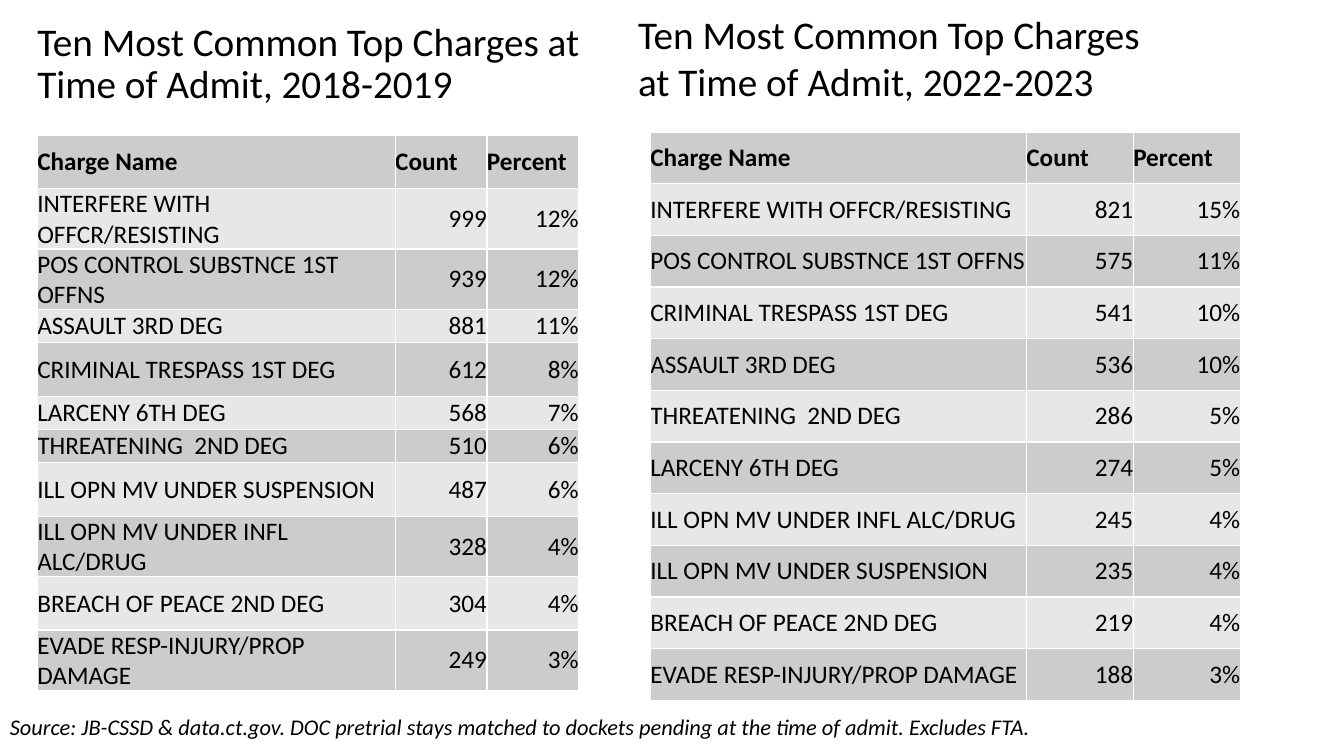
from dataclasses import dataclass

from lxml import etree
from pptx import Presentation
from pptx.dml.color import RGBColor
from pptx.enum.text import MSO_ANCHOR, MSO_AUTO_SIZE, PP_ALIGN
from pptx.oxml.ns import qn
from pptx.util import Pt

LEFT, RIGHT = PP_ALIGN.LEFT, PP_ALIGN.RIGHT
TOP, MIDDLE = MSO_ANCHOR.TOP, MSO_ANCHOR.MIDDLE
FIXED, GROW = MSO_AUTO_SIZE.NONE, MSO_AUTO_SIZE.SHAPE_TO_FIT_TEXT
TITLE_ONLY = 5
SCALE = 9144  # 100 px to the inch


def px(num):
    return num * SCALE


@dataclass(frozen=True)
class Theme:
    font: str = "Calibri"
    ink: str = "000000"
    dark: str = "CCCCCC"
    light: str = "E7E7E7"
    rule: str = "FFFFFF"
    head: int = 28
    body: int = 18
    note: int = 16


class Board:
    def __init__(self, slide, theme):
        self.slide = slide
        self.theme = theme

    def style(self, frame, size, bold=False, italic=False, align=LEFT):
        for para in frame.paragraphs:
            para.alignment = align
            for run in para.runs:
                font = run.font
                font.name = self.theme.font
                font.size = Pt(size)
                font.bold = bold
                font.italic = italic
                font.color.rgb = RGBColor.from_string(self.theme.ink)

    def title(self, text, x, y, w, h):
        shape = self.slide.shapes.title
        shape.left, shape.top, shape.width, shape.height = map(px, (x, y, w, h))
        frame = shape.text_frame
        frame.text = text
        frame.word_wrap = True
        frame.auto_size = FIXED
        frame.vertical_anchor = MIDDLE
        frame.paragraphs[0].line_spacing = 0.9
        self.style(frame, self.theme.head)

    def text(self, text, x, y, w, h, size, italic=False):
        frame = self.slide.shapes.add_textbox(*map(px, (x, y, w, h))).text_frame
        frame.text = text
        frame.word_wrap = True
        frame.auto_size = GROW
        frame.vertical_anchor = TOP
        self.style(frame, size, italic=italic)

    def edge(self, cell):
        """Draw a thin rule on all four sides of a cell."""
        props = cell._tc.get_or_add_tcPr()
        for side in ("a:lnL", "a:lnR", "a:lnT", "a:lnB"):
            line = etree.SubElement(props, qn(side), w=str(Pt(1)))
            fill = etree.SubElement(line, qn("a:solidFill"))
            etree.SubElement(fill, qn("a:srgbClr"), val=self.theme.rule)

    def cell(self, cell, text, fill, bold, align):
        cell.margin_left = cell.margin_right = 0
        cell.margin_top = cell.margin_bottom = 0
        cell.vertical_anchor = MIDDLE
        self.edge(cell)
        cell.fill.solid()
        cell.fill.fore_color.rgb = RGBColor.from_string(fill)
        cell.text_frame.text = text
        self.style(cell.text_frame, self.theme.body, bold=bold, align=align)

    def table(self, rows, x, y, h, cols, highs=()):
        """Rows share the height evenly unless highs gives each its own."""
        box = px(x), px(y), px(sum(cols)), px(h)
        grid = self.slide.shapes.add_table(len(rows), len(cols), *box).table
        for col, wide in zip(grid.columns, cols):
            col.width = px(wide)
        for row, high in zip(grid.rows, highs):
            row.height = px(high)
        for r, row in enumerate(rows):
            fill = self.theme.light if r % 2 else self.theme.dark
            for c, text in enumerate(row):
                align = RIGHT if r and c else LEFT
                self.cell(grid.cell(r, c), text, fill, r == 0, align)


HEADS = ("Charge Name", "Count", "Percent")
EARLY = [
    HEADS,
    ("INTERFERE WITH OFFCR/RESISTING", "999", "12%"),
    ("POS CONTROL SUBSTNCE 1ST OFFNS", "939", "12%"),
    ("ASSAULT 3RD DEG", "881", "11%"),
    ("CRIMINAL TRESPASS 1ST DEG", "612", "8%"),
    ("LARCENY 6TH DEG", "568", "7%"),
    ("THREATENING  2ND DEG", "510", "6%"),
    ("ILL OPN MV UNDER SUSPENSION", "487", "6%"),
    ("ILL OPN MV UNDER INFL ALC/DRUG", "328", "4%"),
    ("BREACH OF PEACE 2ND DEG", "304", "4%"),
    ("EVADE RESP-INJURY/PROP DAMAGE", "249", "3%"),
]
LATE = [
    HEADS,
    ("INTERFERE WITH OFFCR/RESISTING", "821", "15%"),
    ("POS CONTROL SUBSTNCE 1ST OFFNS", "575", "11%"),
    ("CRIMINAL TRESPASS 1ST DEG", "541", "10%"),
    ("ASSAULT 3RD DEG", "536", "10%"),
    ("THREATENING  2ND DEG", "286", "5%"),
    ("LARCENY 6TH DEG", "274", "5%"),
    ("ILL OPN MV UNDER INFL ALC/DRUG", "245", "4%"),
    ("ILL OPN MV UNDER SUSPENSION", "235", "4%"),
    ("BREACH OF PEACE 2ND DEG", "219", "4%"),
    ("EVADE RESP-INJURY/PROP DAMAGE", "188", "3%"),
]
HIGHS = (53, 58, 58, 33, 53, 33, 33, 53, 58, 53, 58)
LEAD = "Ten Most Common Top Charges at Time of Admit, "
SOURCE = (
    "Source: JB-CSSD & data.ct.gov. DOC pretrial stays matched to dockets "
    "pending at the time of admit. Excludes FTA."
)


def main():
    deck = Presentation()
    deck.slide_width, deck.slide_height = px(1333), px(750)
    theme = Theme()
    board = Board(deck.slides.add_slide(deck.slide_layouts[TITLE_ONLY]), theme)
    board.title(LEAD + "2018-2019", 27, -3, 596, 135)
    board.text(LEAD + "2022-2023", 623, 5, 537, 135, theme.head)
    board.text(SOURCE, 0, 703, 1102, 67, theme.note, italic=True)
    board.table(EARLY, 37, 134, 552, (355, 91, 91), HIGHS)
    board.table(LATE, 645, 131, 564, (373, 106, 106))
    deck.save("out.pptx")


if __name__ == "__main__":
    main()
